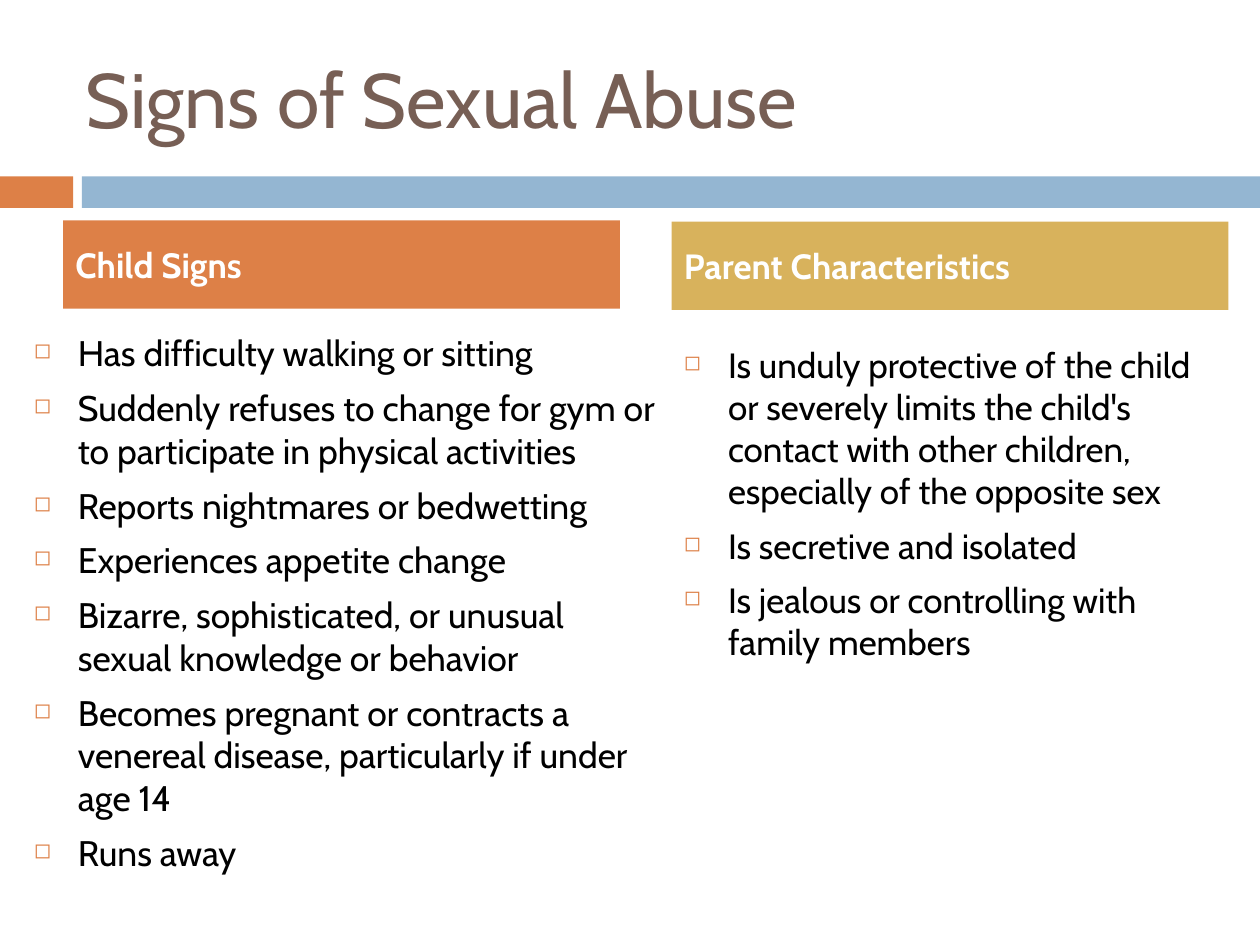
"""Builds a slide comparing child signs and parent characteristics."""
from lxml import etree
from pptx import Presentation
from pptx.dml.color import RGBColor
from pptx.enum.shapes import MSO_SHAPE
from pptx.enum.text import MSO_ANCHOR, MSO_AUTO_SIZE, PP_ALIGN
from pptx.oxml.ns import qn
from pptx.util import Inches, Pt

RECT = MSO_SHAPE.RECTANGLE
TOP, MIDDLE = MSO_ANCHOR.TOP, MSO_ANCHOR.MIDDLE
LEFT = PP_ALIGN.LEFT
NO_FIT = MSO_AUTO_SIZE.NONE
TITLE_ONLY = 5
COLORS = {
    "title": "775F55",
    "orange": "DD8047",
    "blue": "94B6D2",
    "gold": "D8B25C",
    "white": "FFFFFF",
    "black": "000000",
}
CHILD_SIGNS = [
    "Has difficulty walking or sitting",
    "Suddenly refuses to change for gym or to participate in physical activities",
    "Reports nightmares or bedwetting",
    "Experiences appetite change",
    "Bizarre, sophisticated, or unusual sexual knowledge or behavior",
    "Becomes pregnant or contracts a venereal disease, particularly if under age 14",
    "Runs away",
]
PARENT_TRAITS = [
    "Is unduly protective of the child or severely limits the child's contact "
    "with other children, especially of the opposite sex",
    "Is secretive and isolated",
    "Is jealous or controlling with family members",
]


def rgb(name):
    return RGBColor.from_string(COLORS[name])


def add_bullet(p, indent=0.35):
    pPr = p._p.get_or_add_pPr()
    pPr.set("marL", str(Inches(indent)))
    pPr.set("indent", str(-Inches(indent)))
    color = etree.SubElement(pPr, qn("a:buClr"))
    etree.SubElement(color, qn("a:srgbClr"), val=COLORS["orange"])
    etree.SubElement(pPr, qn("a:buSzPct"), val="60000")
    etree.SubElement(pPr, qn("a:buChar"), char="◻")


def write(tf, lines, font="Cabin", size=20, color="black", bold=False,
          anchor=TOP, before=0, bullets=False):
    tf.word_wrap = True
    tf.auto_size = NO_FIT
    tf.vertical_anchor = anchor
    for i, line in enumerate(lines):
        p = tf.add_paragraph() if i else tf.paragraphs[0]
        p.alignment = LEFT
        p.space_before = Pt(before)
        if bullets:
            add_bullet(p)
        r = p.add_run()
        r.text = line
        r.font.name = font
        r.font.size = Pt(size)
        r.font.bold = bold
        r.font.color.rgb = rgb(color)


class Deck:
    """Holds the style and the current slide."""

    def __init__(self, prs, font="Cabin"):
        self.font = font
        self.s = prs.slides.add_slide(prs.slide_layouts[TITLE_ONLY])

    def title(self, text, x, y, w, h):
        sp = self.s.shapes.title
        sp.left, sp.top, sp.width, sp.height = map(Inches, (x, y, w, h))
        write(sp.text_frame, [text], font=self.font, size=44, color="title", anchor=MIDDLE)

    def bar(self, x, y, w, h, color):
        sp = self.s.shapes.add_shape(RECT, *map(Inches, (x, y, w, h)))
        sp.shadow.inherit = False
        sp.fill.solid()
        sp.fill.fore_color.rgb = rgb(color)
        sp.line.fill.background()
        return sp

    def heading(self, text, x, y, color):
        sp = self.bar(x, y, 4.42, 0.7, color)
        write(sp.text_frame, [text], font=self.font, color="white", bold=True,
              anchor=MIDDLE, before=7)

    def bullet_list(self, lines, x, y, w, h, size=20):
        sp = self.s.shapes.add_textbox(*map(Inches, (x, y, w, h)))
        write(sp.text_frame, lines, font=self.font, size=size, before=7, bullets=True)


def main():
    prs = Presentation()
    prs.slide_width, prs.slide_height = Inches(10), Inches(7.5)
    deck = Deck(prs)
    deck.bar(0, 1.4, 0.58, 0.25, "orange")
    deck.bar(0.65, 1.4, 9.35, 0.25, "blue")
    deck.title("Signs of Sexual Abuse", 0.58, 0.3, 8.92, 0.95)
    deck.heading("Child Signs", 0.5, 1.75, "orange")
    deck.bullet_list(CHILD_SIGNS, 0.17, 2.58, 5.17, 4.08, size=20.3)
    deck.heading("Parent Characteristics", 5.33, 1.76, "gold")
    deck.bullet_list(PARENT_TRAITS, 5.33, 2.68, 4.5, 4.07)
    prs.save("out.pptx")


if __name__ == "__main__":
    main()
